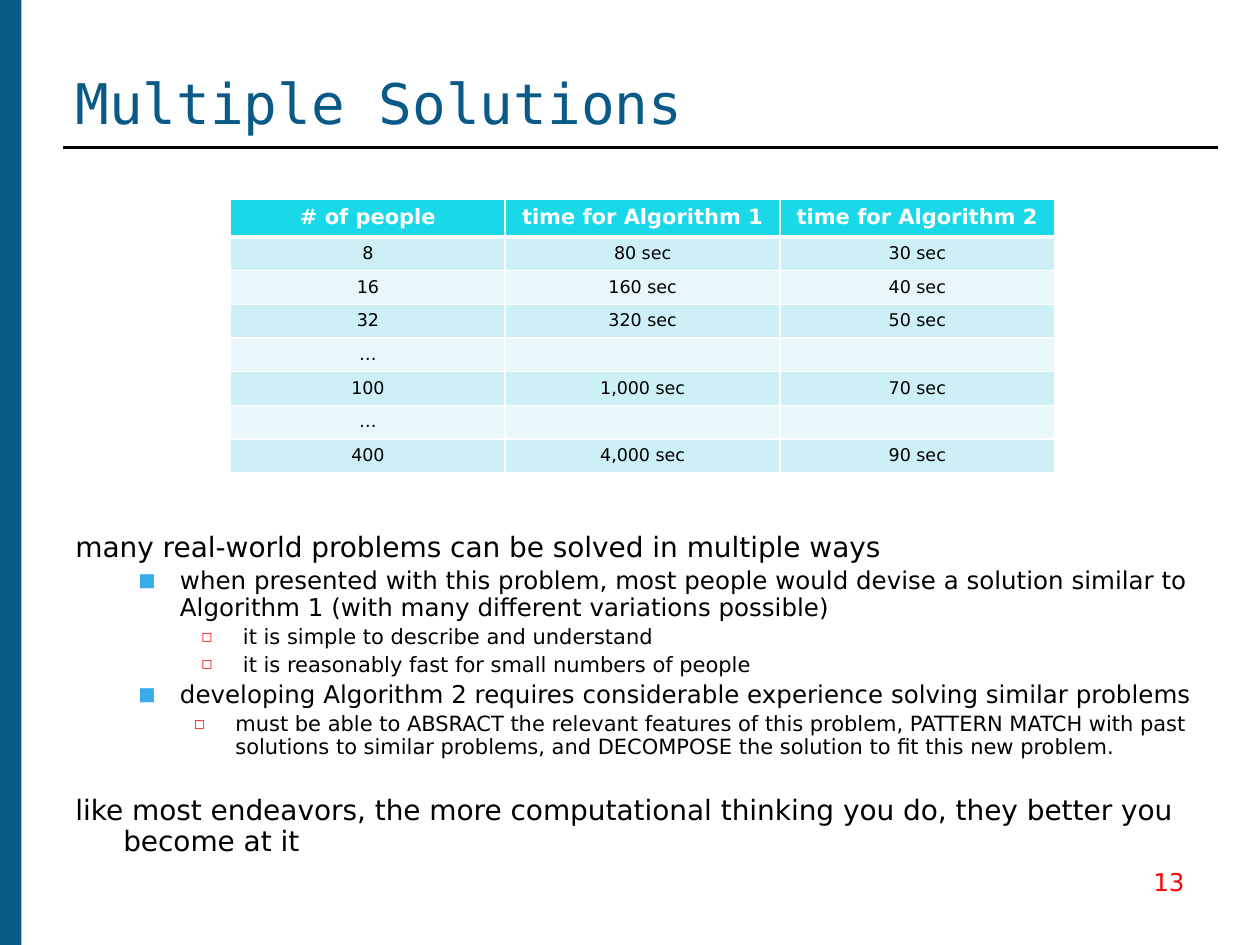
"""Build the Multiple Solutions slide with its timing table and bullet notes."""
from lxml.etree import SubElement
from pptx import Presentation
from pptx.dml.color import RGBColor
from pptx.enum.shapes import MSO_CONNECTOR, MSO_SHAPE
from pptx.enum.text import MSO_ANCHOR, PP_ALIGN
from pptx.oxml import parse_xml
from pptx.oxml.ns import nsdecls, qn
from pptx.util import Inches, Pt

COLORS = {
    "black": "000000",
    "white": "FFFFFF",
    "navy": "0A5A87",
    "red": "FF0000",
    "sky": "38ABED",
    "header": "19D8E7",
    "odd": "CCF0F6",
    "even": "E8F8FA",
}
SANS = "DejaVu Sans"


def set_font(paragraph, size, color, name=SANS, bold=False):
    font = paragraph.font
    font.size, font.name, font.bold = Pt(size), name, bold
    font.color.rgb = RGBColor.from_string(COLORS[color])


def add_text_frame(left, top, width, height, anchor=MSO_ANCHOR.TOP):
    box = slide.shapes.add_textbox(Inches(left), Inches(top), Inches(width), Inches(height))
    box.text_frame.word_wrap = True
    box.text_frame.vertical_anchor = anchor
    return box.text_frame


presentation = Presentation()
presentation.slide_width, presentation.slide_height = Inches(10), Inches(7.5)
slide = presentation.slides.add_slide(presentation.slide_layouts[6])

rule = slide.shapes.add_connector(
    MSO_CONNECTOR.STRAIGHT, Inches(0.5), Inches(1.17), Inches(9.67), Inches(1.17)
)
rule.line.color.rgb = RGBColor.from_string(COLORS["black"])
rule.line.width = Pt(1.5)
SubElement(rule.line._get_or_add_ln().getparent(), qn("a:effectLst"))

side_bar = slide.shapes.add_shape(MSO_SHAPE.RECTANGLE, 0, 0, Inches(0.17), Inches(7.5))
side_bar.shadow.inherit = False
side_bar.fill.solid()
side_bar.fill.fore_color.rgb = RGBColor.from_string(COLORS["navy"])
side_bar.line.fill.background()

title = add_text_frame(0.5, 0.33, 7.75, 0.8, MSO_ANCHOR.BOTTOM).paragraphs[0]
title.text = "Multiple Solutions"
set_font(title, 32, "navy", "DejaVu Sans Mono")

LEVELS = [(16, None, None, None), (14, "■", "sky", 75), (12, "◻", "red", 65)]
notes = [
    (0, 0.38, "many real-world problems can be solved in multiple ways"),
    (1, 0.83, "when presented with this problem, most people would devise a solution "
              "similar to Algorithm 1 (with many different variations possible)"),
    (2, 1.33, "it is simple to describe and understand"),
    (2, 1.33, "it is reasonably fast for small numbers of people"),
    (1, 0.83, "developing Algorithm 2 requires considerable experience solving similar problems"),
    (2, 1.27, "must be able to ABSRACT the relevant features of this problem, PATTERN MATCH "
              "with past solutions to similar problems, and DECOMPOSE the solution to fit "
              "this new problem."),
    (0, 0.38, "like most endeavors, the more computational thinking you do, "
              "they better you become at it"),
]
body = add_text_frame(0.5, 4.18, 9.08, 2.82)
for index, (level, margin, text) in enumerate(notes):
    size, bullet, bullet_color, bullet_size = LEVELS[level]
    paragraph = body.paragraphs[0] if index == 0 else body.add_paragraph()
    paragraph.text = text
    paragraph.level = level
    paragraph.line_spacing = 0.9
    if index:
        paragraph.space_before = Pt(21.5 if level == 0 else round(size * 0.23, 1))
    properties = paragraph._p.get_or_add_pPr()
    properties.set("marL", str(Inches(margin)))
    properties.set("indent", str(-Inches(0.33 if bullet else 0.38)))
    if bullet:
        color = SubElement(properties, qn("a:buClr"))
        SubElement(color, qn("a:srgbClr"), val=COLORS[bullet_color])
        SubElement(properties, qn("a:buSzPct"), val=str(bullet_size * 1000))
        SubElement(properties, qn("a:buFont"), typeface=SANS)
        SubElement(properties, qn("a:buChar"), char=bullet)
    else:
        SubElement(properties, qn("a:buNone"))
    set_font(paragraph, size, "black")

number = add_text_frame(7.17, 6.83, 2.33, 0.5).paragraphs[0]
number.text = "13"
number.alignment = PP_ALIGN.RIGHT
set_font(number, 14, "red")

timings = [
    ("# of people", "time for Algorithm 1", "time for Algorithm 2"),
    ("8", "80 sec", "30 sec"),
    ("16", "160 sec", "40 sec"),
    ("32", "320 sec", "50 sec"),
    ("…", "", ""),
    ("100", "1,000 sec", "70 sec"),
    ("…", "", ""),
    ("400", "4,000 sec", "90 sec"),
]
table = slide.shapes.add_table(
    len(timings), 3, Inches(1.83), Inches(1.58), Inches(6.53), Inches(1.93)
).table
for column in table.columns:
    column.width = Inches(2.18)
for row_index, values in enumerate(timings):
    is_header = row_index == 0
    table.rows[row_index].height = Inches(0.25 if is_header else 0.24)
    fill = "header" if is_header else ("even", "odd")[row_index % 2]
    for column_index, value in enumerate(values):
        cell = table.cell(row_index, column_index)
        cell.fill.solid()
        cell.fill.fore_color.rgb = RGBColor.from_string(COLORS[fill])
        paragraph = cell.text_frame.paragraphs[0]
        paragraph.alignment = PP_ALIGN.CENTER
        set_font(paragraph, 12 if is_header else 10, "white" if is_header else "black", bold=is_header)
        if value:
            paragraph.add_run().text = value
        else:
            SubElement(paragraph._p, qn("a:endParaRPr"), sz="1000")
        for position, side in enumerate("LRTB"):
            width = 3 if (row_index, side) in ((0, "B"), (1, "T")) else 1
            border = parse_xml(
                f'<a:ln{side} {nsdecls("a")} w="{Pt(width)}"><a:solidFill>'
                f'<a:srgbClr val="{COLORS["white"]}"/></a:solidFill></a:ln{side}>'
            )
            cell._tc.get_or_add_tcPr().insert(position, border)

presentation.save("out.pptx")
